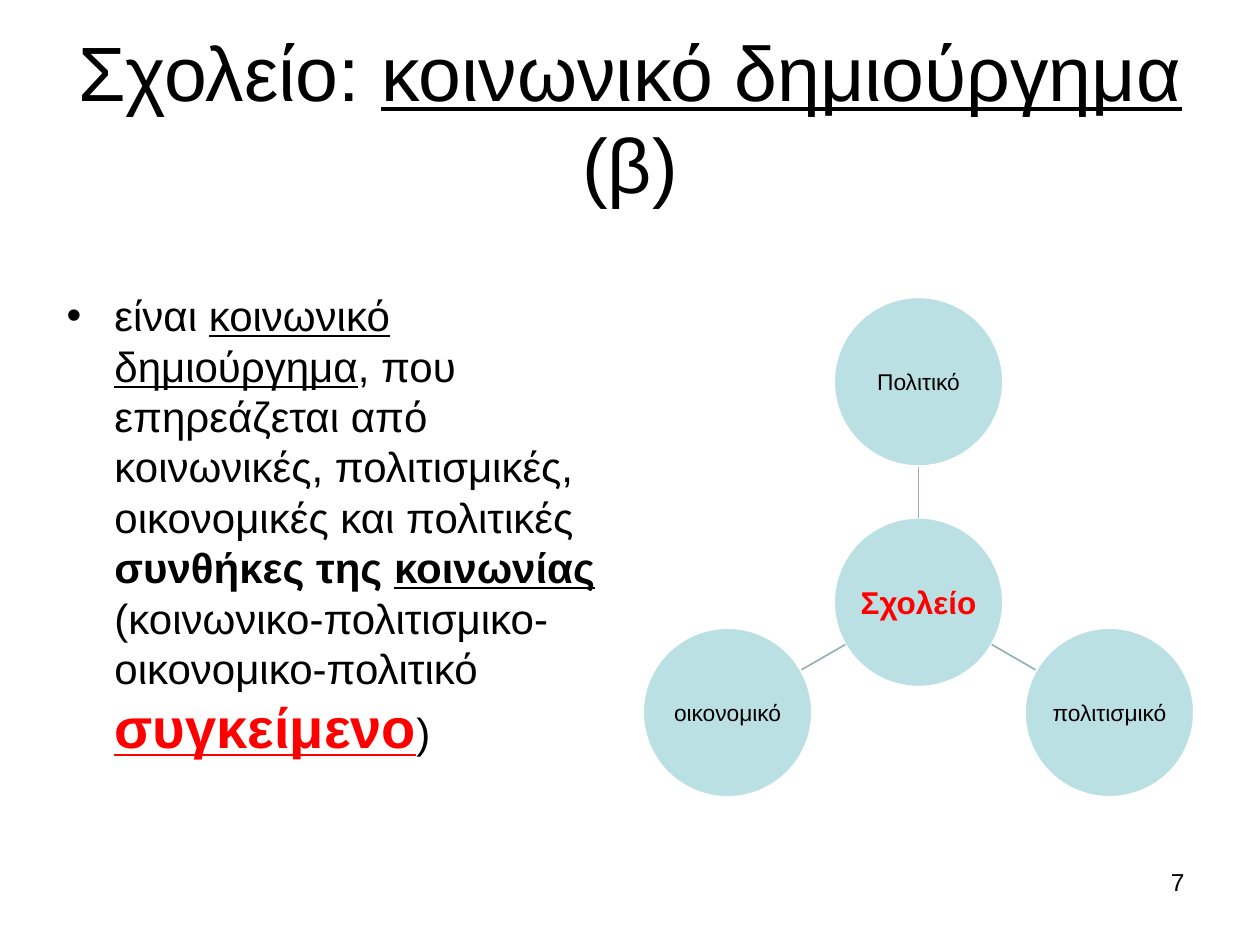
from math import cos, radians, sin

from lxml.etree import SubElement
from pptx import Presentation
from pptx.dml.color import RGBColor
from pptx.enum.shapes import MSO_CONNECTOR as CONNECTOR, MSO_SHAPE as SHAPE
from pptx.enum.text import MSO_ANCHOR as ANCHOR, MSO_AUTO_SIZE as AUTO_SIZE, PP_ALIGN as ALIGN
from pptx.oxml.ns import qn
from pptx.util import Inches, Pt

FONT = "Arial"
BLACK, RED, WHITE, AQUA, SPOKE = "000000", "FF0000", "FFFFFF", "BBE0E3", "96B3B6"
UNDERLINE = {"underline": True}
BOLD = {"bold": True}

TITLE = [("Σχολείο: ", {}), ("κοινωνικό δημιούργημα", UNDERLINE), (" (β)", {})]
DEFINITION = [
    ("είναι ", {}),
    ("κοινωνικό δημιούργημα", UNDERLINE),
    (", που επηρεάζεται από κοινωνικές, πολιτισμικές, οικονομικές και πολιτικές ", {}),
    ("συνθήκες της ", BOLD),
    ("κοινωνίας", BOLD | UNDERLINE),
    (" (κοινωνικο-πολιτισμικο-οικονομικο-πολιτικό ", {}),
    ("συγκείμενο", BOLD | UNDERLINE | {"size": 32, "color": RED}),
    (")", {}),
]
HUB = "Σχολείο"
CONDITIONS = [("Πολιτικό", -90), ("πολιτισμικό", 30), ("οικονομικό", 150)]
PAGE_NUMBER = "7"

HUB_X, HUB_Y = 7.29, 4.78
RADIUS, ORBIT = 0.67, 1.75


def rgb(color):
    return RGBColor.from_string(color)


def write(paragraph, pieces, size):
    for words, style in pieces:
        run = paragraph.add_run()
        run.text = words
        font = run.font
        font.name = FONT
        font.size = Pt(style.get("size", size))
        font.bold = style.get("bold", False)
        font.underline = style.get("underline", False)
        font.color.rgb = rgb(style.get("color", BLACK))


def add_text(slide, left, top, width, height):
    frame = slide.shapes.add_textbox(*map(Inches, (left, top, width, height))).text_frame
    frame.word_wrap = True
    return frame.paragraphs[0]


def add_bullet(paragraph, indent):
    props = paragraph._p.get_or_add_pPr()
    props.set("marL", str(Inches(indent)))
    props.set("indent", str(-Inches(indent)))
    SubElement(props, qn("a:buFont")).set("typeface", FONT)
    SubElement(props, qn("a:buChar")).set("char", "•")


def polar(distance, angle):
    return (HUB_X + distance * cos(radians(angle)),
            HUB_Y + distance * sin(radians(angle)))


def add_circle(slide, center, words, size, style):
    x, y = center
    box = (x - RADIUS, y - RADIUS, 2 * RADIUS, 2 * RADIUS)
    circle = slide.shapes.add_shape(SHAPE.OVAL, *map(Inches, box))
    circle.shadow.inherit = False
    circle.fill.solid()
    circle.fill.fore_color.rgb = rgb(AQUA)
    circle.line.color.rgb = rgb(WHITE)
    circle.line.width = Pt(1)
    frame = circle.text_frame
    frame.margin_left = frame.margin_right = frame.margin_top = frame.margin_bottom = Inches(0.01)
    frame.word_wrap = False
    frame.vertical_anchor = ANCHOR.MIDDLE
    frame.paragraphs[0].alignment = ALIGN.CENTER
    write(frame.paragraphs[0], [(words, style)], size)


def add_spoke(slide, angle):
    ends = polar(RADIUS, angle) + polar(ORBIT - RADIUS, angle)
    spoke = slide.shapes.add_connector(CONNECTOR.STRAIGHT, *map(Inches, ends))
    spoke.line.color.rgb = rgb(SPOKE)
    spoke.line.width = Pt(1)
    SubElement(spoke._element.spPr, qn("a:effectLst"))


def main():
    deck = Presentation()
    deck.slide_width, deck.slide_height = Inches(10), Inches(7.5)
    slide = deck.slides.add_slide(deck.slide_layouts[5])

    title = slide.shapes.title
    title.left, title.top, title.width, title.height = map(Inches, (0.5, 0.3, 9, 1.25))
    title.text_frame.auto_size = AUTO_SIZE.NONE
    title.text_frame.vertical_anchor = ANCHOR.MIDDLE
    title.text_frame.paragraphs[0].alignment = ALIGN.CENTER
    write(title.text_frame.paragraphs[0], TITLE, 44)

    definition = add_text(slide, 0.43, 2.25, 4.42, 4.95)
    add_bullet(definition, 0.38)
    write(definition, DEFINITION, 24)

    add_circle(slide, (HUB_X, HUB_Y), HUB, 18, BOLD | {"color": RED})
    for condition, angle in CONDITIONS:
        add_spoke(slide, angle)
        add_circle(slide, polar(ORBIT, angle), condition, 13, {})

    page = add_text(slide, 7.17, 6.83, 2.33, 0.52)
    page.alignment = ALIGN.RIGHT
    write(page, [(PAGE_NUMBER, {})], 14)

    deck.save("out.pptx")


if __name__ == "__main__":
    main()
